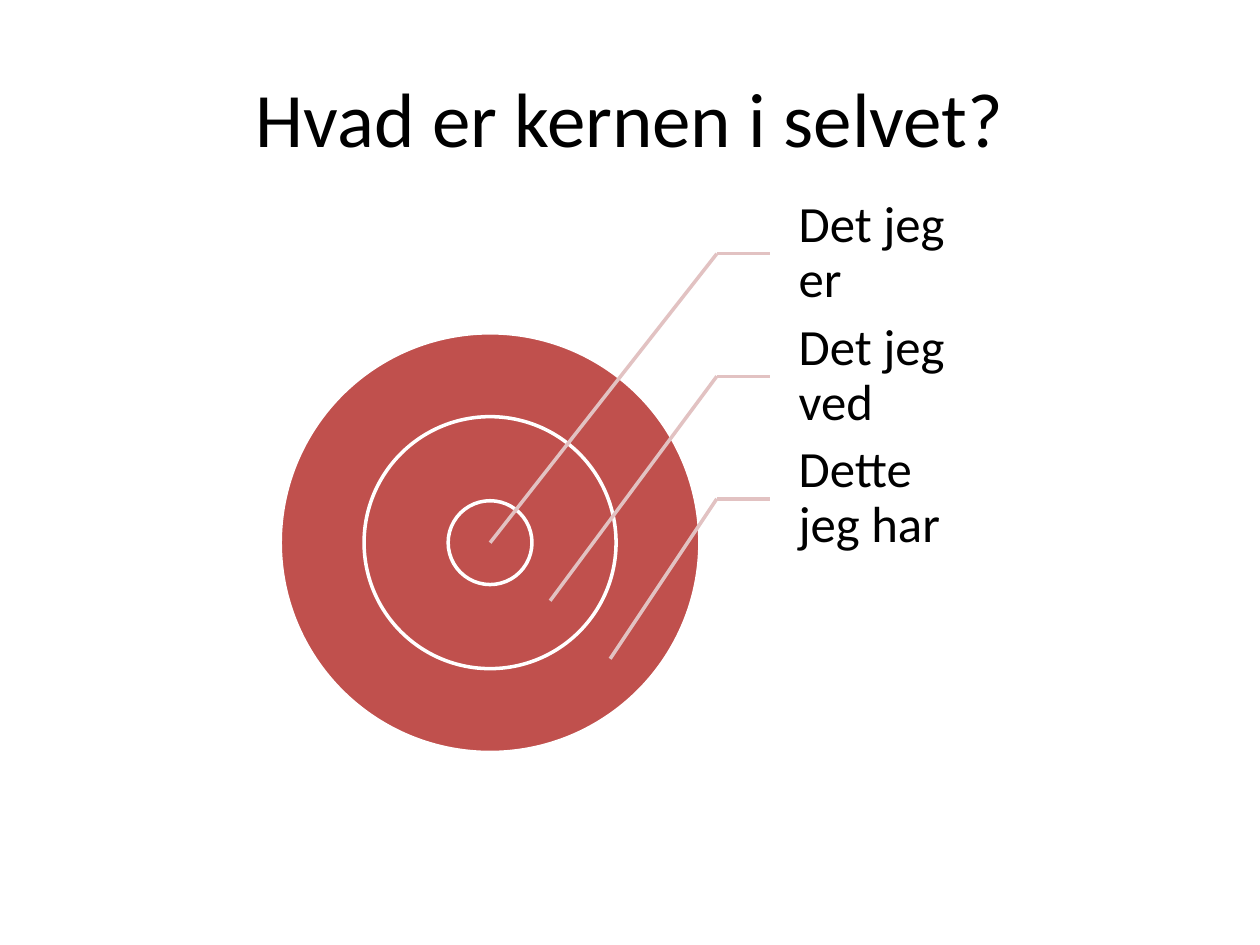
from pptx import Presentation
from pptx.dml.color import RGBColor
from pptx.enum import shapes, text
from pptx.oxml import ns
from pptx.util import Cm, Pt

RED = RGBColor(0xC0, 0x50, 0x4D)
PINK = RGBColor(0xE2, 0xC2, 0xC2)
WHITE = RGBColor(0xFF, 0xFF, 0xFF)
BLACK = RGBColor(0, 0, 0)

# Target, in centimetres
CENTER_X, CENTER_Y = 9.88, 10.94
DIAMETERS = (8.46, 5.08, 1.69)

# Labels and their leader lines, in centimetres
LABELS = ("Det jeg er", "Det jeg ved", "Dette jeg har")
LABEL_X, LABEL_Y = 15.52, 3.88
LABEL_W, LABEL_H = 4.23, 2.47
ELBOW_X = 14.45
TIP_DX, TIP_DY = 1.21, 1.17


def add_text(slide, words, x, y, w, h, size, align, insets):
    sp = slide.shapes.add_textbox(Cm(x), Cm(y), Cm(w), Cm(h))
    tf = sp.text_frame
    tf.word_wrap = True
    tf.vertical_anchor = text.MSO_ANCHOR.MIDDLE
    tf.margin_left, tf.margin_top, tf.margin_right, tf.margin_bottom = map(Cm, insets)
    p = tf.paragraphs[0]
    p.text = words
    p.alignment = align
    p.font.name = "Calibri"
    p.font.size = Pt(size)
    p.font.color.rgb = BLACK
    return p


def add_ring(slide, diameter):
    sp = slide.shapes.add_shape(
        shapes.MSO_SHAPE.OVAL,
        Cm(CENTER_X - diameter / 2), Cm(CENTER_Y - diameter / 2),
        Cm(diameter), Cm(diameter))
    sp.shadow.inherit = False
    sp.fill.solid()
    sp.fill.fore_color.rgb = RED
    sp.line.color.rgb = WHITE
    sp.line.width = Pt(2)


def add_line(slide, x1, y1, x2, y2):
    line = slide.shapes.add_connector(
        shapes.MSO_CONNECTOR.STRAIGHT, Cm(x1), Cm(y1), Cm(x2), Cm(y2))
    line.line.color.rgb = PINK
    line.line.width = Pt(2)
    sp_pr = line._element.spPr
    sp_pr.append(sp_pr.makeelement(ns.qn("a:effectLst")))


def add_label(slide, i, words):
    top = LABEL_Y + i * LABEL_H
    middle = top + LABEL_H / 2
    p = add_text(slide, words, LABEL_X, top, LABEL_W, LABEL_H, 29,
                 text.PP_ALIGN.LEFT, (0.58, 0.1, 0.1, 0.1))
    p.line_spacing = 0.9
    add_line(slide, ELBOW_X, middle, LABEL_X, middle)
    add_line(slide, ELBOW_X, middle, CENTER_X + i * TIP_DX, CENTER_Y + i * TIP_DY)


def main():
    prs = Presentation()
    prs.slide_width, prs.slide_height = Cm(25.4), Cm(19.05)
    slide = prs.slides.add_slide(prs.slide_layouts[6])

    # Title
    add_text(slide, "Hvad er kernen i selvet?", 1.27, 0.76, 22.86, 3.18, 44,
             text.PP_ALIGN.CENTER, (0.25, 0.13, 0.25, 0.13))

    # Concentric rings, largest first
    for diameter in DIAMETERS:
        add_ring(slide, diameter)

    # Labels, from the core outwards
    for i, words in enumerate(LABELS):
        add_label(slide, i, words)

    prs.save("out.pptx")


if __name__ == "__main__":
    main()
